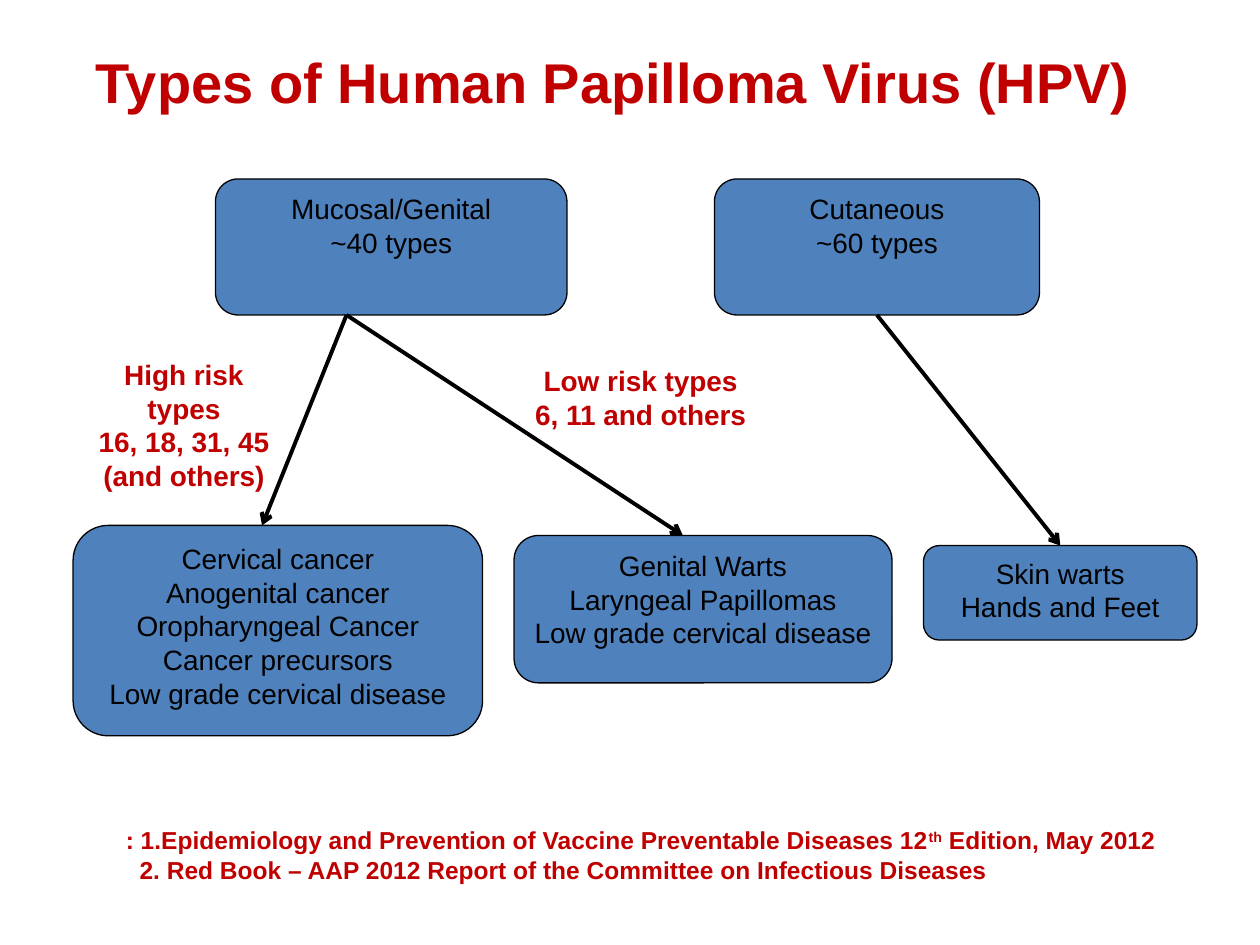
import pptx
import pptx.util
import pptx.dml.color
import pptx.enum.shapes
import pptx.enum.text
import pptx.oxml.ns
from lxml import etree

Inches = pptx.util.Inches
Pt = pptx.util.Pt
RGB = pptx.dml.color.RGBColor.from_string
SHAPE = pptx.enum.shapes.MSO_SHAPE
ALIGN = pptx.enum.text.PP_ALIGN
qn = pptx.oxml.ns.qn

COLORS = {"accent": "C00000", "box": "4F81BD", "ink": "000000"}


def write(sp, lines, size=16, color="ink", bold=False, align=ALIGN.CENTER):
    tf = sp.text_frame
    tf.word_wrap = True
    tf.vertical_anchor = pptx.enum.text.MSO_ANCHOR.TOP
    for i, runs in enumerate(lines):
        p = tf.paragraphs[0] if i == 0 else tf.add_paragraph()
        p.alignment = align
        for text in [runs] if isinstance(runs, str) else runs:
            r = p.add_run()
            r.text = text
            r.font.name = "Arial"
            r.font.size = Pt(size)
            r.font.bold = bold
            r.font.color.rgb = RGB(COLORS[color])
    return tf


prs = pptx.Presentation()
prs.slide_width = Inches(10)
prs.slide_height = Inches(7.5)
s = prs.slides.add_slide(prs.slide_layouts[5])

title = s.shapes.title
title.left, title.top = Inches(0.67), Inches(0.33)
title.width, title.height = Inches(8.67), Inches(0.64)
tf = write(title, ["Types of Human Papilloma Virus (HPV)"], size=32, color="accent", bold=True)
tf.auto_size = pptx.enum.text.MSO_AUTO_SIZE.NONE
tf.margin_left, tf.margin_right = Inches(0.05), Inches(0.32)

boxes = {
    "mucosal": (1.71, 1.42, 2.79, 1.08, ["Mucosal/Genital", "~40 types"]),
    "cutaneous": (5.67, 1.42, 2.58, 1.08, ["Cutaneous", "~60 types"]),
    "cancers": (0.58, 4.17, 3.25, 1.67, [
        "Cervical cancer", "Anogenital cancer", "Oropharyngeal Cancer",
        "Cancer precursors", "Low grade cervical disease"]),
    "genital warts": (4.08, 4.25, 3, 1.17, [
        "Genital Warts", "Laryngeal Papillomas", "Low grade cervical disease"]),
    "skin warts": (7.33, 4.33, 2.17, 0.75, ["Skin warts", "Hands and Feet"]),
}
nodes = {}
for name, (x, y, w, h, lines) in boxes.items():
    sp = s.shapes.add_shape(SHAPE.ROUNDED_RECTANGLE, Inches(x), Inches(y), Inches(w), Inches(h))
    sp.shadow.inherit = False
    sp.fill.solid()
    sp.fill.fore_color.rgb = RGB(COLORS["box"])
    sp.line.color.rgb = RGB(COLORS["ink"])
    sp.line.width = Pt(0.75)
    tf = write(sp, lines)
    tf.margin_left = tf.margin_right = Inches(0.05)
    nodes[name] = sp

arrows = []
for x1, y1, x2, y2 in [(2.75, 2.5, 2.08, 4.17), (2.75, 2.5, 5.42, 4.25), (6.96, 2.5, 8.42, 4.33)]:
    arrow = s.shapes.add_connector(pptx.enum.shapes.MSO_CONNECTOR.STRAIGHT,
                                   Inches(x1), Inches(y1), Inches(x2), Inches(y2))
    arrow.line.color.rgb = RGB(COLORS["ink"])
    arrow.line.width = Pt(2.25)
    etree.SubElement(arrow.line._get_or_add_ln(), qn("a:tailEnd"), type="arrow")
    etree.SubElement(arrow._element.spPr, qn("a:effectLst"))
    arrows.append(arrow)
arrows[2].begin_connect(nodes["cutaneous"], 2)
arrows[2].end_connect(nodes["skin warts"], 0)

labels = [
    (0.67, 2.79, 1.58, 1.18, ["High risk types", "16, 18, 31, 45", "(and others)"]),
    (3.92, 2.84, 2.33, 0.64, ["Low risk types", "6, 11 and others"]),
]
for x, y, w, h, lines in labels:
    sp = s.shapes.add_textbox(Inches(x), Inches(y), Inches(w), Inches(h))
    write(sp, lines, color="accent", bold=True)

references = s.shapes.add_textbox(Inches(0.58), Inches(6.5), Inches(8.83), Inches(0.57))
tf = write(references, [
    [": 1.Epidemiology and Prevention of Vaccine Preventable Diseases 12", "th", " Edition, May 2012"],
    "2. Red Book – AAP 2012 Report of the Committee on Infectious Diseases",
], size=14, color="accent", bold=True, align=ALIGN.LEFT)
tf.paragraphs[0].runs[1].font._element.set("baseline", "30000")
for p, indent in zip(tf.paragraphs, (0.32, 0.43)):
    pPr = p._p.get_or_add_pPr()
    pPr.set("marL", str(Inches(indent)))
    pPr.set("indent", "0")

prs.save("out.pptx")
